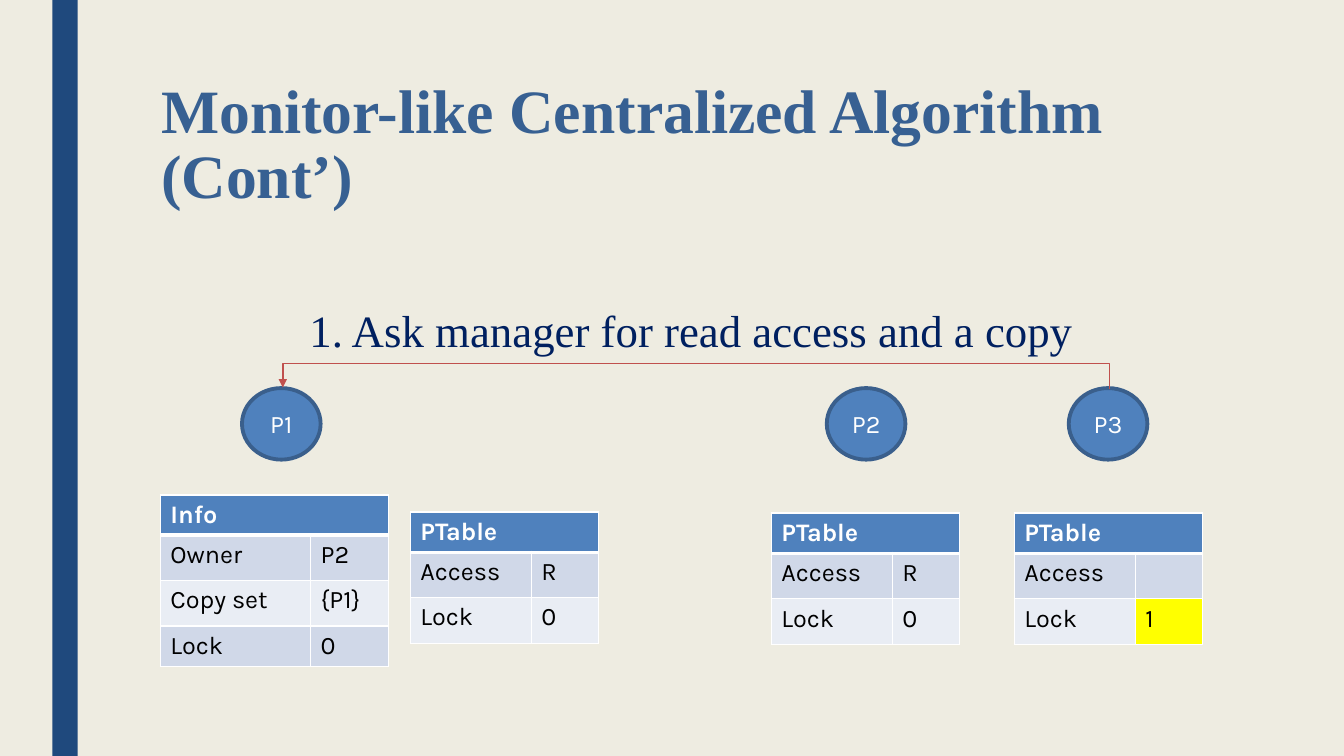
from lxml import etree
from pptx import Presentation
from pptx.dml.color import RGBColor
from pptx.enum.shapes import MSO_CONNECTOR, MSO_SHAPE
from pptx.enum.text import MSO_ANCHOR, PP_ALIGN
from pptx.oxml.ns import qn
from pptx.util import Pt

PX = 9144
RECT, OVAL = MSO_SHAPE.RECTANGLE, MSO_SHAPE.OVAL
ELBOW = MSO_CONNECTOR.ELBOW
TOP, MIDDLE = MSO_ANCHOR.TOP, MSO_ANCHOR.MIDDLE
LEFT, CENTER = PP_ALIGN.LEFT, PP_ALIGN.CENTER

CREAM = RGBColor(0xEE, 0xEC, 0xE1)
NAVY = RGBColor(0x1F, 0x49, 0x7D)
STEEL = RGBColor(0x37, 0x60, 0x92)
BLUE = RGBColor(0x4F, 0x81, 0xBD)
RIM = RGBColor(0x3A, 0x5F, 0x8C)
INK = RGBColor(0x00, 0x20, 0x60)
RED = RGBColor(0xC0, 0x50, 0x4D)
BAND = RGBColor(0xD0, 0xD8, 0xE8)
PALE = RGBColor(0xE9, 0xED, 0xF4)
YELLOW = RGBColor(0xFF, 0xFF, 0x00)
WHITE = RGBColor(0xFF, 0xFF, 0xFF)
BLACK = RGBColor(0x00, 0x00, 0x00)

SERIF, SANS = "Times New Roman", "Karla"
HEADING = {"name": SERIF, "size": Pt(44), "bold": True}
STEP = {"name": SERIF, "size": Pt(32), "bold": False}
BODY = {"name": SANS, "size": Pt(18), "bold": False}
HEAD = {**BODY, "bold": True}


def emu(*sizes):
    """Turn lengths in px into EMU."""
    return [size * PX for size in sizes]


def style(frame, look, color, align=LEFT):
    """Format all the text of a frame."""
    for para in frame.paragraphs:
        para.alignment = align
        for run in para.runs:
            for key, value in look.items():
                setattr(run.font, key, value)
            run.font.color.rgb = color


def add_text(slide, box, text, look, color, wrap=True):
    """Place a text box and return its frame."""
    frame = slide.shapes.add_textbox(*emu(*box)).text_frame
    frame.text = text
    frame.word_wrap = wrap
    frame.vertical_anchor = TOP
    style(frame, look, color)
    return frame


def add_shape(slide, kind, box, fill):
    """Place a flat shape with a plain fill."""
    shape = slide.shapes.add_shape(kind, *emu(*box))
    shape.shadow.inherit = False
    shape.fill.solid()
    shape.fill.fore_color.rgb = fill
    shape.line.fill.background()
    return shape


def add_node(slide, box, name):
    """Draw one process as a labelled circle."""
    node = add_shape(slide, OVAL, box, BLUE)
    node.line.color.rgb = RIM
    node.line.width = Pt(2.75)
    frame = node.text_frame
    frame.text = name
    frame.vertical_anchor = MIDDLE
    style(frame, BODY, WHITE, CENTER)


def add_edges(cell, widths):
    """Draw white borders of the given point widths on a cell."""
    props = cell._tc.get_or_add_tcPr()
    for side, width in widths.items():
        edge = etree.SubElement(props, qn(f"a:ln{side}"), w=str(Pt(width)))
        fill = etree.SubElement(edge, qn("a:solidFill"))
        etree.SubElement(fill, qn("a:srgbClr"), val=str(WHITE))


def add_grid(slide, box, cols, heights, title, rows, marks=()):
    """Draw a titled table and highlight the marked cells."""
    grid = slide.shapes.add_table(len(heights), len(cols), *emu(*box)).table
    for col, width in zip(grid.columns, emu(*cols)):
        col.width = width
    for row, height in zip(grid.rows, emu(*heights)):
        row.height = height
    for r, texts in enumerate([(title, ""), *rows]):
        for c, text in enumerate(texts):
            cell = grid.cell(r, c)
            cell.text = text
            add_edges(cell, {"L": 1, "R": 1, "T": 3 if r == 1 else 1,
                             "B": 1 if r else 3})
            fill = (BAND if r % 2 else PALE) if r else BLUE
            cell.fill.solid()
            cell.fill.fore_color.rgb = YELLOW if (r, c) in marks else fill
            style(cell.text_frame, BODY if r else HEAD, BLACK if r else WHITE)
    grid.cell(0, 0).merge(grid.cell(0, 1))


def add_page(slide, left, top, access, lock, marks=()):
    """Draw the page table of one process."""
    add_grid(slide, (left, top, 187, 129), (120, 67), (36, 45, 45), "PTable",
             [("Access", access), ("Lock", lock)], marks)


def add_ask(slide, start, end, y, rise):
    """Draw the request arrow that rises above the circles."""
    mid, half = (start + end) // 2, (start - end) // 2
    link = slide.shapes.add_connector(
        ELBOW, *emu(mid, y + half, mid + 1, y - half))
    link.line.color.rgb = RED
    link.line.width = Pt(1)
    props = link._element.spPr
    props.find(qn("a:xfrm")).set("rot", "16200000")
    guides = props.find(qn("a:prstGeom")).get_or_add_avLst()
    etree.SubElement(guides, qn("a:gd"), name="adj1",
                     fmla=f"val {rise * 100000}")
    etree.SubElement(props.find(qn("a:ln")), qn("a:tailEnd"), type="triangle")
    etree.SubElement(props, qn("a:effectLst"))


def add_frame(slide, box):
    """Draw the background, the side bar and the title."""
    left, top, width, height = box
    slide.background.fill.solid()
    slide.background.fill.fore_color.rgb = CREAM
    add_shape(slide, RECT, (left + 52, top, 25, height), NAVY)
    title = add_text(slide, (left + 150, top + 75, width - 182, 162),
                     "Monitor-like Centralized Algorithm (Cont’)",
                     HEADING, STEEL)
    title.paragraphs[0].line_spacing = 0.89


def add_scene(slide, box):
    """Draw the processes, their tables and the request."""
    left, top, width, height = box
    for name, x in {"P1": 81, "P2": 661, "P3": 901}.items():
        add_node(slide, (left + x, top + 90, 78, 71), name)
    add_grid(slide, (left, top + 196, 226, 169), (149, 77), (35, 45, 45, 35),
             "Info", [("Owner", "P2"), ("Copy set", "{P1}"), ("Lock", "0")])
    add_page(slide, left + 248, top + 213, "R", "0")
    add_page(slide, left + 606, top + 214, "R", "0")
    add_page(slide, left + 847, top + 214, "", "1", {(2, 1)})
    add_ask(slide, left + 941, left + 121, top + 90, 25)
    add_text(slide, (left + 138, top, 785, 64),
             "1. Ask manager for read access and a copy", STEP, INK, False)


def main():
    """Build and save the slide."""
    deck = Presentation()
    deck.slide_width, deck.slide_height = emu(1333, 750)
    slide = deck.slides.add_slide(deck.slide_layouts[6])
    add_frame(slide, (0, 0, 1333, 750))
    add_scene(slide, (159, 295, 1034, 365))
    deck.save("out.pptx")


if __name__ == "__main__":
    main()
